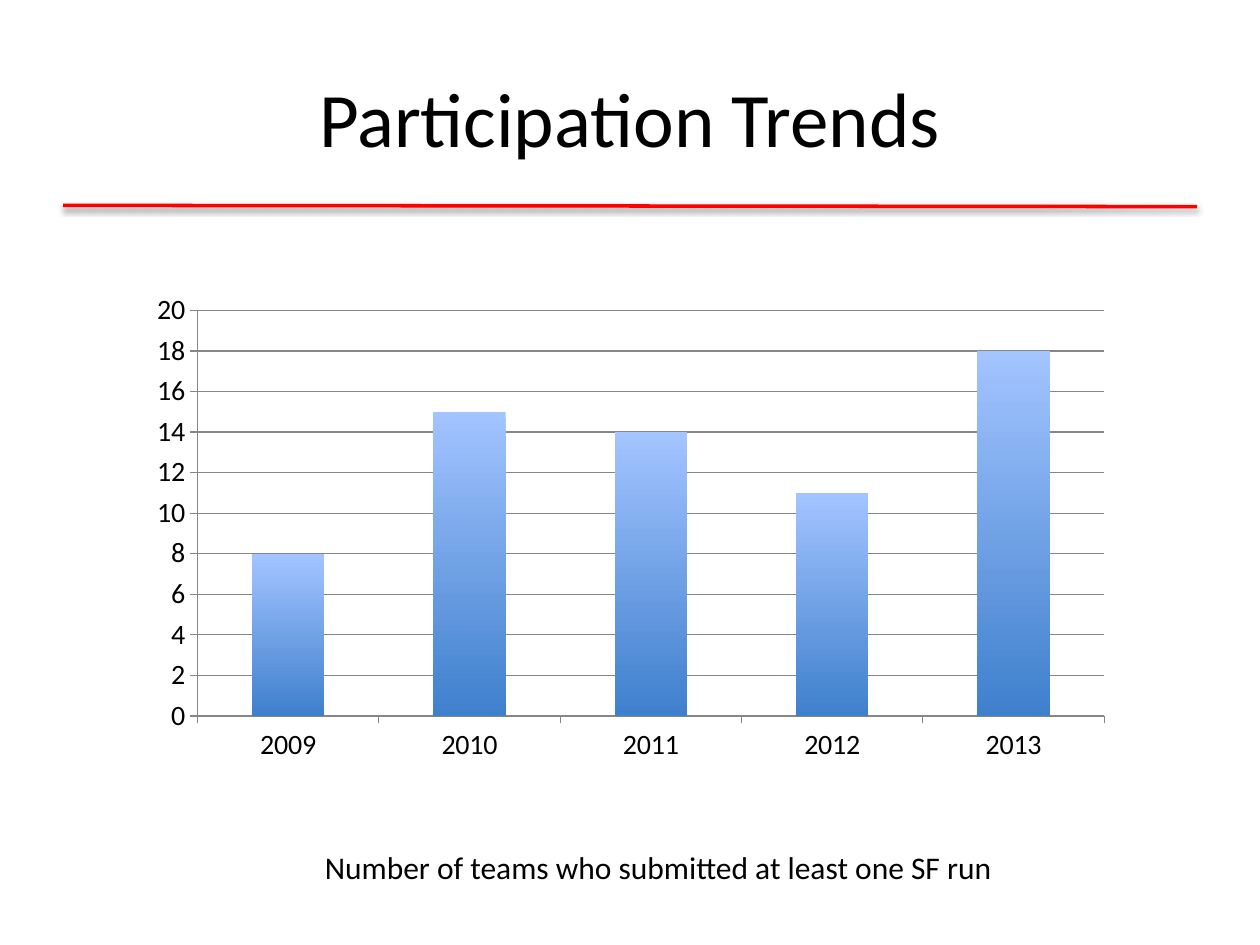
from lxml import etree
from pptx import Presentation
from pptx.chart.data import CategoryChartData as Data
from pptx.dml.color import RGBColor as Rgb
from pptx.enum.chart import XL_CHART_TYPE as Kind, XL_TICK_MARK as Tick
from pptx.enum.shapes import MSO_CONNECTOR as Conn
from pptx.enum.text import MSO_ANCHOR as Anchor, PP_ALIGN as Align
from pptx.oxml.ns import qn
from pptx.util import Pt

PX = 9144  # 100 px to the inch
FONT = "Calibri"
HUES = {"ink": "000000", "rule": "FF0000", "grid": "868686",
        "top": "A3C4FF", "base": "3F80CD"}
TEAMS = {"2009": 8, "2010": 15, "2011": 14, "2012": 11, "2013": 18}


def hue(name):
    return Rgb.from_string(HUES[name])


def emu(*nums):
    return [n * PX for n in nums]


def style(font, size):
    font.name, font.size = FONT, Pt(size)
    font.color.rgb = hue("ink")


def add_text(slide, box, text, size, align, wrap):
    frame = slide.shapes.add_textbox(*emu(*box)).text_frame
    frame.text = text
    frame.word_wrap = wrap
    frame.vertical_anchor = Anchor.MIDDLE
    para = frame.paragraphs[0]
    para.alignment = align
    style(para.runs[0].font, size)


def add_shade(line):
    # Soft shadow straight below the line
    list_ = etree.SubElement(line._element.spPr, qn("a:effectLst"))
    shade = etree.SubElement(list_, qn("a:outerShdw"), blurRad="40000",
                             dist="20000", dir="5400000", rotWithShape="0")
    tone = etree.SubElement(shade, qn("a:srgbClr"), val=HUES["ink"])
    etree.SubElement(tone, qn("a:alpha"), val="38000")


def add_head(slide, box):
    left, top, width, height = box
    # Red rule below the title
    y = top + height + 8
    rule = slide.shapes.add_connector(
        Conn.STRAIGHT, *emu(left, y, left + width, y + 1))
    rule.line.color.rgb = hue("rule")
    rule.line.width = Pt(2)
    add_shade(rule)
    # Title
    add_text(slide, box, "Participation Trends", 44, Align.CENTER, True)


def add_bars(slide, box):
    data = Data()
    data.categories = list(TEAMS)
    data.add_series("Series 1", TEAMS.values())
    chart = slide.shapes.add_chart(
        Kind.COLUMN_CLUSTERED, *emu(*box), data).chart
    chart.has_title = chart.has_legend = False
    style(chart.font, 16)

    # Axes and grid
    years, count = chart.category_axis, chart.value_axis
    count.minimum_scale, count.maximum_scale, count.major_unit = 0, 20, 2
    count.has_major_gridlines = True
    for axis in (years, count):
        axis.major_tick_mark = Tick.OUTSIDE
    for part in (years, count, count.major_gridlines):
        part.format.line.color.rgb = hue("grid")
        part.format.line.width = Pt(0.75)

    # Columns, shaded from top to base
    plot = chart.plots[0]
    plot.gap_width = 150
    plot.vary_by_categories = False
    fill = plot.series[0].format.fill
    fill.gradient()
    fill.gradient_angle = 270
    for stop, name in zip(fill.gradient_stops, ("top", "base")):
        stop.color.rgb = hue(name)


def add_note(slide, box):
    add_text(slide, box, "Number of teams who submitted at least one SF run",
             18, Align.LEFT, False)


def main():
    deck = Presentation()
    deck.slide_width, deck.slide_height = emu(1000, 750)
    slide = deck.slides.add_slide(deck.slide_layouts[6])
    add_head(slide, (50, 30, 900, 125))
    add_bars(slide, (109, 225, 783, 388))
    add_note(slide, (248, 668, 556, 40))
    deck.save("out.pptx")


if __name__ == "__main__":
    main()
